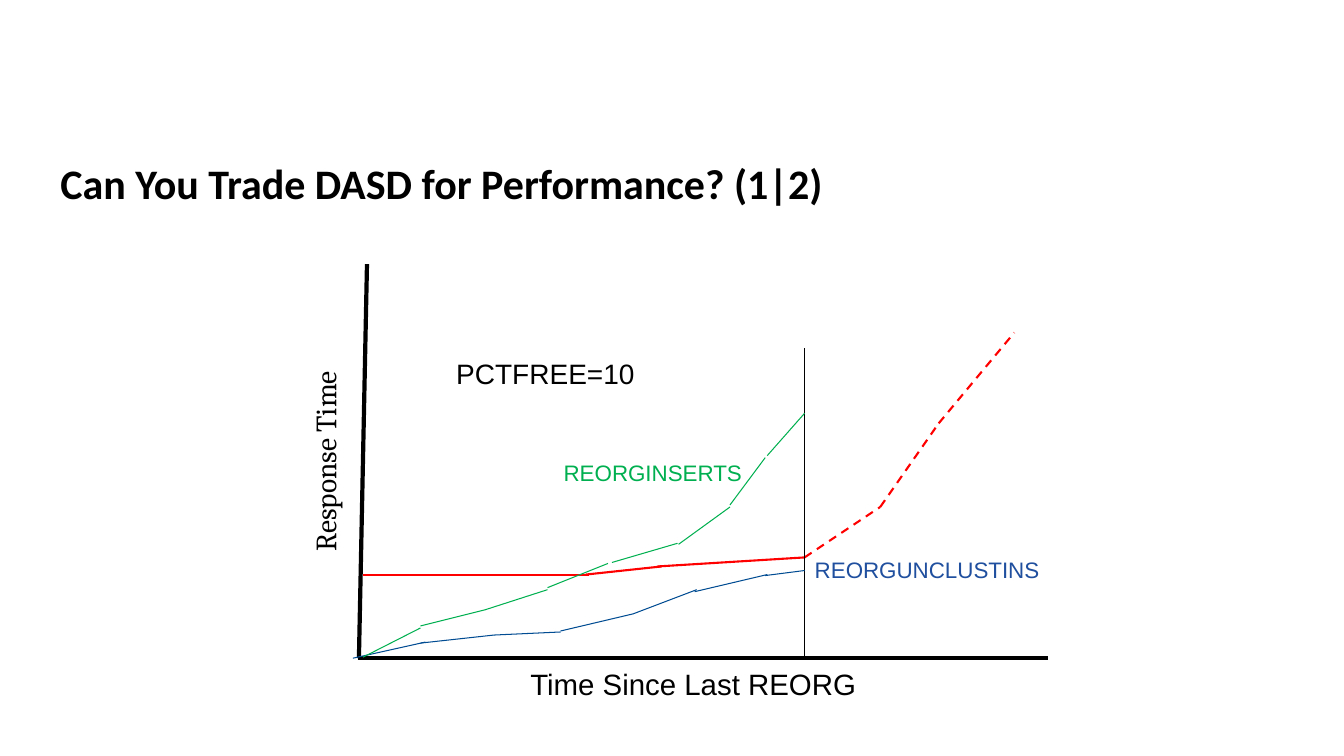
import pptx
import pptx.util
import pptx.dml.color
import pptx.enum.dml
import pptx.enum.shapes
import pptx.enum.text
import pptx.oxml.ns
import lxml.etree

PX = 9144  # EMU per px, 100 px to the inch
COLOURS = {
    "black": "000000",
    "red": "FF0000",
    "green": "00B050",
    "blue": "004C93",
    "label blue": "1F4F9E",
}

# Line segments as (x1, y1, x2, y2)
AXES = [(364, 262, 356, 653), (1039, 653, 355, 653)]
REORG_POINT = [(798, 653, 798, 345)]
RESPONSE = [(360, 570, 584, 570), (581, 570, 656, 562), (652, 562, 798, 553)]
RESPONSE_FORECAST = [(798, 553, 873, 503), (873, 503, 931, 420),
                     (931, 420, 1006, 330)]
UNCLUSTERED = [(350, 653, 422, 637), (417, 638, 490, 630),
               (490, 630, 556, 627), (556, 626, 628, 609),
               (628, 609, 691, 585), (689, 587, 761, 570),
               (759, 571, 798, 566)]
INSERTS = [(360, 652, 417, 623), (417, 621, 481, 605),
           (481, 605, 543, 585), (543, 583, 603, 559),
           (607, 558, 672, 539), (673, 540, 724, 503),
           (724, 501, 759, 454), (761, 452, 798, 410)]


def emu(*lengths):
    return [pptx.util.Emu(length * PX) for length in lengths]


def rgb(colour):
    return pptx.dml.color.RGBColor.from_string(COLOURS[colour])


def set_font(span, colour, **values):
    for name, value in values.items():
        setattr(span.font, name, value)
    span.font.color.rgb = rgb(colour)


def add_title(page, text):
    title = page.shapes.title
    title.left, title.top, title.width, title.height = emu(50, 141, 1072, 87)
    title.text_frame.vertical_anchor = pptx.enum.text.MSO_ANCHOR.MIDDLE
    para = title.text_frame.paragraphs[0]
    para.alignment = pptx.enum.text.PP_ALIGN.LEFT
    para.line_spacing = 0.9
    span = para.add_run()
    span.text = text
    set_font(span, "black", name="Calibri", size=pptx.util.Pt(30), bold=True)


def add_label(page, text, place, size, colour="black", font="Arial", turn=0):
    box = page.shapes.add_textbox(*emu(*place))
    box.rotation = turn
    box.text_frame.word_wrap = True
    para = box.text_frame.paragraphs[0]
    para.alignment = pptx.enum.text.PP_ALIGN.CENTER
    span = para.add_run()
    span.text = text
    set_font(span, colour, name=font, size=pptx.util.Pt(size))


def add_segments(page, segments, colour, width, dashed=False):
    for segment in segments:
        line = page.shapes.add_connector(
            pptx.enum.shapes.MSO_CONNECTOR.STRAIGHT, *emu(*segment))
        line.line.color.rgb = rgb(colour)
        line.line.width = pptx.util.Pt(width)
        if dashed:
            line.line.dash_style = pptx.enum.dml.MSO_LINE.DASH
        lxml.etree.SubElement(line._element.spPr,
                              pptx.oxml.ns.qn("a:effectLst"))


def main():
    deck = pptx.Presentation()
    deck.slide_width, deck.slide_height = emu(1333, 750)
    page = deck.slides.add_slide(deck.slide_layouts.get_by_name("Title Only"))
    add_title(page, "Can You Trade DASD for Performance? (1|2)")

    # Axes and their names
    add_segments(page, AXES, "black", 3)
    add_label(page, "Response Time", (196, 434, 254, 47), 21,
              font="Cambria", turn=270)
    add_label(page, "Time Since Last REORG", (502, 656, 371, 47), 21)

    # Response time before and after the reorganisation point
    add_segments(page, RESPONSE, "red", 1.5)
    add_segments(page, RESPONSE_FORECAST, "red", 1.5, dashed=True)
    add_segments(page, REORG_POINT, "black", 0.75)

    # Indicator curves and their labels
    add_segments(page, UNCLUSTERED, "blue", 0.75)
    add_label(page, "REORGUNCLUSTINS", (790, 547, 259, 38), 16, "label blue")
    add_segments(page, INSERTS, "green", 0.75)
    add_label(page, "REORGINSERTS", (518, 451, 259, 38), 16, "green")
    add_label(page, "PCTFREE=10", (438, 349, 206, 45), 20)

    deck.save("out.pptx")


if __name__ == "__main__":
    main()
